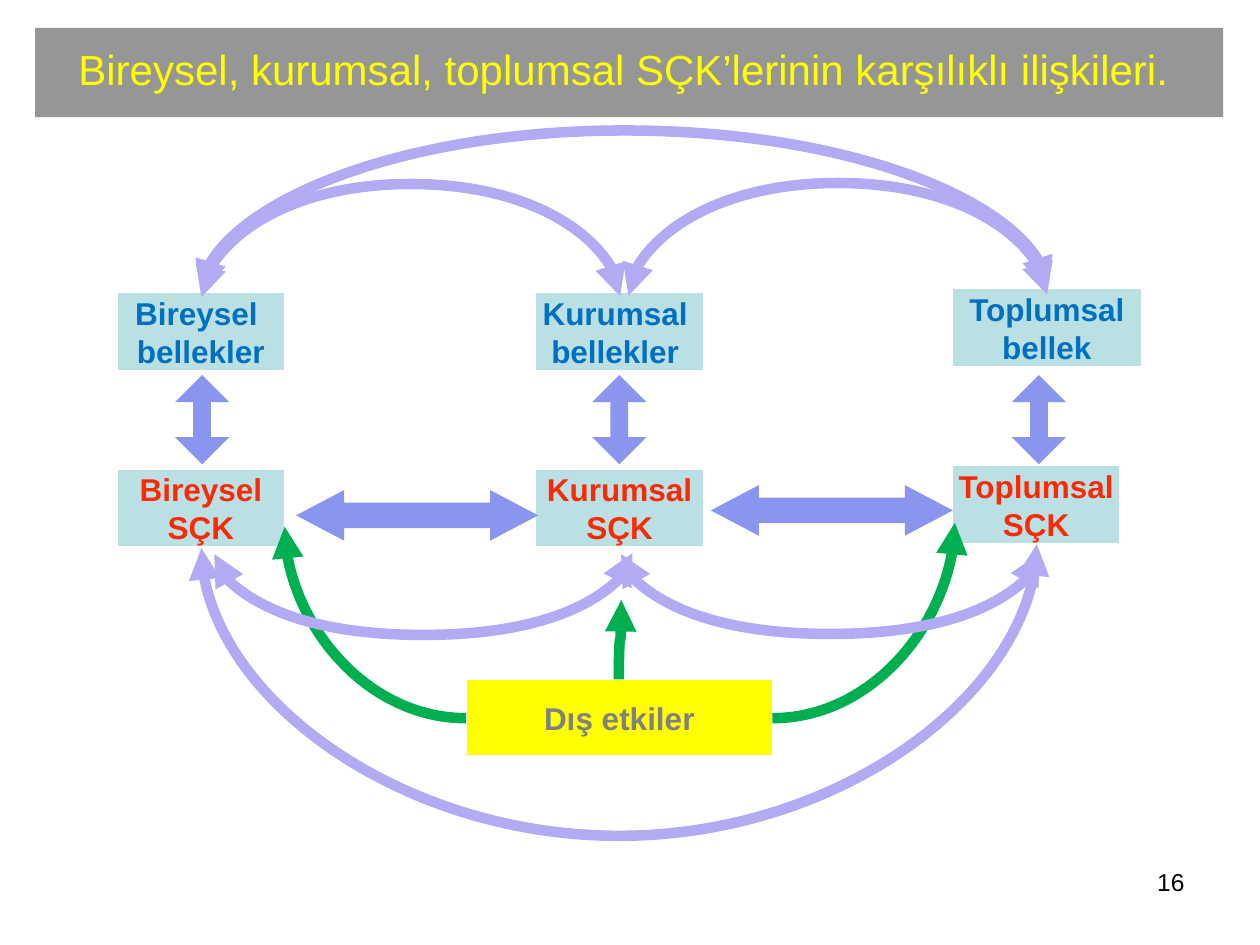
from dataclasses import dataclass

import pptx
import pptx.dml.color
import pptx.enum.shapes
import pptx.enum.text
import pptx.oxml
import pptx.oxml.ns
import pptx.util

Cm = pptx.util.Cm
Pt = pptx.util.Pt
qn = pptx.oxml.ns.qn
SHAPE = pptx.enum.shapes.MSO_SHAPE
CURVE = pptx.enum.shapes.MSO_CONNECTOR.CURVE
ALIGN = pptx.enum.text.PP_ALIGN
ANCHOR = pptx.enum.text.MSO_ANCHOR

BLUE, RED, GREEN = "0070C0", "FA2906", "00B050"
LILAC, PERIWINKLE, PALE_TEAL = "B3AAF4", "8995EF", "BBE0E3"


@dataclass
class Box:
    lines: list[str]
    x: float
    y: float
    color: str
    w: float = 3.38
    h: float = 1.57
    fill: str = PALE_TEAL


@dataclass
class Arc:
    """Double-headed arc between two points, peaking at height apex."""
    left: float
    right: float
    y_left: float
    y_right: float
    apex: float


@dataclass
class Influence:
    begin: tuple[float, float]
    end: tuple[float, float]


BOXES = [
    Box(["Bireysel ", "bellekler"], 2.36, 5.9, BLUE),
    Box(["Bireysel", "SÇK"], 2.36, 9.46, RED),
    Box(["Toplumsal", "bellek"], 19.2, 5.82, BLUE, w=3.81),
    Box(["Toplumsal", "SÇK"], 19.2, 9.39, RED),
    Box(["Kurumsal ", "bellekler "], 10.8, 5.9, BLUE),
    Box(["Kurumsal", "SÇK"], 10.8, 9.46, RED),
]
EXTERNAL = Box(["Dış etkiler"], 9.4, 13.69, "808080", 6.17, 1.55, "FFFF00")
UPPER_ARCS = [
    Arc(4.06, 12.5, 5.97, 5.97, 3.71),
    Arc(12.67, 21.11, 5.94, 5.94, 3.69),
    Arc(4.06, 21.11, 5.89, 5.82, 2.63),
]
LOWER_ARCS = [
    Arc(4.06, 20.9, 11.05, 10.97, 16.85),
    Arc(4.32, 12.75, 11.15, 11.15, 12.8),
    Arc(12.52, 20.96, 11.15, 11.15, 12.78),
]
SIDE_INFLUENCES = [
    Influence((9.4, 14.48), (5.74, 10.62)),
    Influence((15.57, 14.48), (19.25, 10.54)),
]


def rgb(color: str):
    return pptx.dml.color.RGBColor.from_string(color)


def write(tf, lines: list[str], *, size: float, color: str, bold=False,
          align=ALIGN.CENTER, anchor=ANCHOR.MIDDLE, wrap=True, spacing=None):
    tf.word_wrap = wrap
    tf.auto_size = pptx.enum.text.MSO_AUTO_SIZE.NONE
    tf.vertical_anchor = anchor
    for i, line in enumerate(lines):
        p = tf.paragraphs[0] if i == 0 else tf.add_paragraph()
        p.alignment = align
        p.line_spacing = spacing
        r = p.add_run()
        r.text = line
        r.font.name = "Arial"
        r.font.size = Pt(size)
        r.font.bold = bold
        r.font.color.rgb = rgb(color)


def add_filled(s, kind, x: float, y: float, w: float, h: float, fill: str):
    sp = s.shapes.add_shape(kind, Cm(x), Cm(y), Cm(w), Cm(h))
    sp.shadow.inherit = False
    sp.fill.solid()
    sp.fill.fore_color.rgb = rgb(fill)
    sp.line.fill.background()
    return sp


def add_box(s, box: Box):
    sp = add_filled(s, SHAPE.RECTANGLE, box.x, box.y, box.w, box.h, box.fill)
    sp.line.color.rgb = rgb("FFFFFF")
    sp.line.width = Pt(0.75)
    tf = sp.text_frame
    tf.margin_left = tf.margin_right = Cm(0.05)
    tf.margin_top = tf.margin_bottom = Cm(0.1)
    write(tf, box.lines, size=18, color=box.color, bold=True, wrap=False)


def add_block_arrow(s, kind, x: float, y: float, w: float, h: float, head: float):
    sp = add_filled(s, kind, x, y, w, h, PERIWINKLE)
    sp.adjustments[0] = 0.5
    sp.adjustments[1] = head


def add_curve(s, begin, end, color: str, ends: list[str], *,
              preset="curvedConnector3", rotation=0, bend=0.5):
    """Curved connector; rotation in degrees turns it about its centre."""
    cn = s.shapes.add_connector(CURVE, *(Cm(v) for v in (*begin, *end)))
    cn.line.color.rgb = rgb(color)
    cn.line.width = Pt(6)
    sppr = cn._element.spPr
    if rotation:
        sppr.find(qn("a:xfrm")).set("rot", str(rotation * 60000))
    geom = sppr.find(qn("a:prstGeom"))
    geom.set("prst", preset)
    if preset == "curvedConnector3":
        guides = geom.get_or_add_avLst()
        gd = pptx.oxml.parse_xml(
            f'<a:gd {pptx.oxml.ns.nsdecls("a")} name="adj1" fmla="val {round(bend * 100000)}"/>')
        guides.append(gd)
    ln = cn.line._get_or_add_ln()
    for tag in ends:
        ln.append(ln.makeelement(qn(tag), {"type": "triangle"}))
    sppr.append(sppr.makeelement(qn("a:effectLst"), {}))


def add_arc(s, arc: Arc):
    """A quarter turn makes the connector leave and arrive vertically."""
    rise = max(arc.y_left - arc.y_right, 0.02)
    span = arc.right - arc.left
    cx, cy = (arc.left + arc.right) / 2, arc.y_right + rise / 2
    add_curve(s, (cx - rise / 2, cy - span / 2), (cx + rise / 2, cy + span / 2),
              LILAC, ["a:headEnd", "a:tailEnd"], rotation=90,
              bend=(arc.apex - arc.y_right) / rise)


def main():
    prs = pptx.Presentation()
    prs.slide_width, prs.slide_height = Cm(25.4), Cm(19.05)
    s = prs.slides.add_slide(prs.slide_layouts[5])

    title = s.shapes.title
    title.left, title.top, title.width, title.height = (
        Cm(v) for v in (0.71, 0.56, 23.95, 1.8))
    title.fill.solid()
    title.fill.fore_color.rgb = rgb("969696")
    write(title.text_frame,
          ["Bireysel, kurumsal, toplumsal SÇK’lerinin karşılıklı ilişkileri. "],
          size=24, color="FFFF00", spacing=0.85)

    number = s.shapes.add_textbox(Cm(18.21), Cm(17.35), Cm(5.92), Cm(1.32))
    write(number.text_frame, ["16"], size=14, color="000000",
          align=ALIGN.RIGHT, anchor=ANCHOR.TOP)

    for box in BOXES:
        add_box(s, box)
    for x in (3.53, 11.94, 20.4):
        add_block_arrow(s, SHAPE.UP_DOWN_ARROW, x, 7.56, 1.09, 1.8, 0.33)
    for x, y in ((5.97, 9.88), (14.33, 9.78)):
        add_block_arrow(s, SHAPE.LEFT_RIGHT_ARROW, x, y, 4.88, 1.02, 0.95)
    for arc in UPPER_ARCS:
        add_arc(s, arc)

    add_box(s, EXTERNAL)
    for inf in SIDE_INFLUENCES:
        add_curve(s, inf.begin, inf.end, GREEN, ["a:tailEnd"],
                  preset="curvedConnector2")
    add_curve(s, (11.7, 12.87), (13.3, 12.92), GREEN, ["a:tailEnd"], rotation=270)
    for arc in LOWER_ARCS:
        add_arc(s, arc)

    prs.save("out.pptx")


if __name__ == "__main__":
    main()
